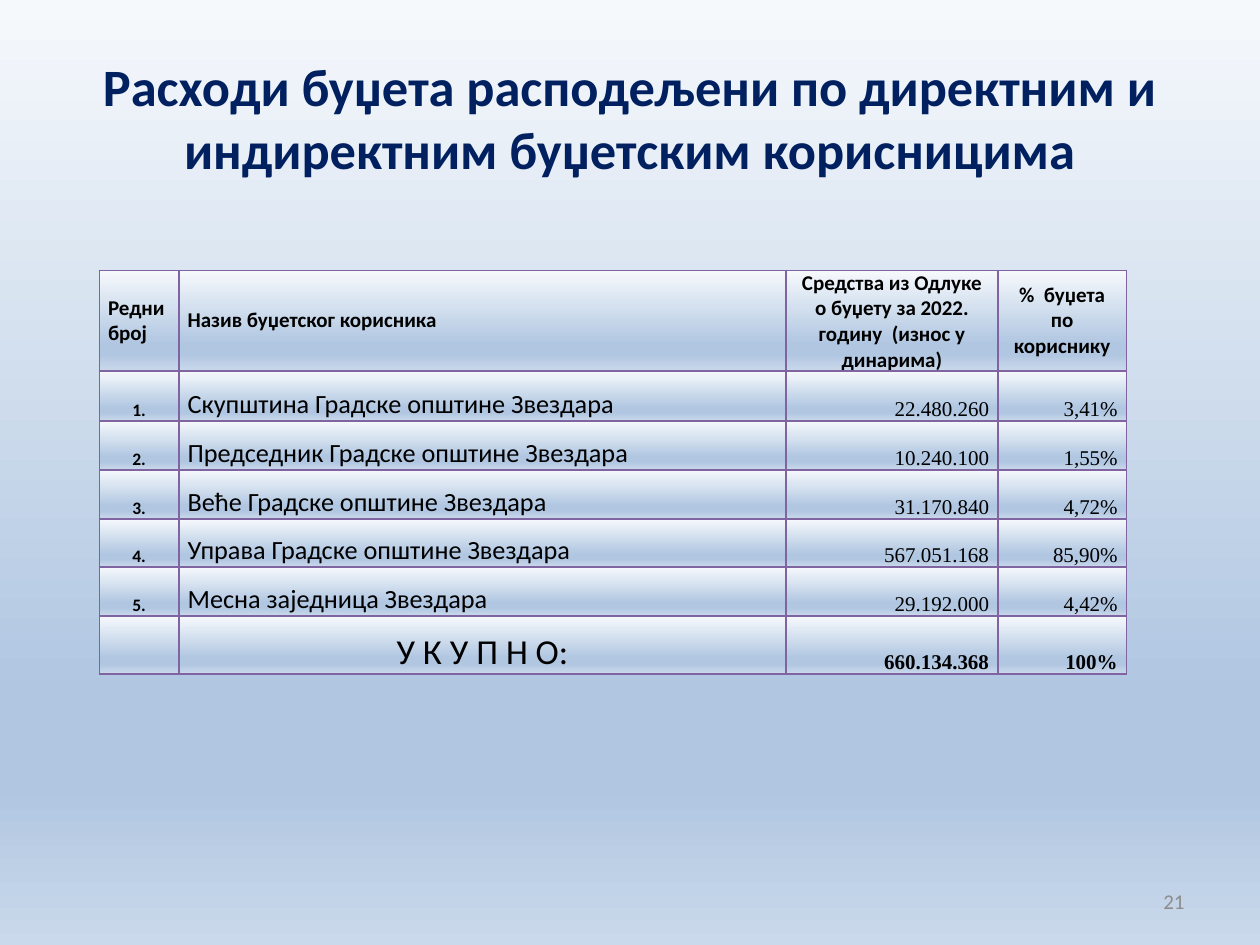
from dataclasses import dataclass

from pptx import Presentation
from pptx.dml.color import RGBColor
from pptx.enum.text import MSO_ANCHOR as Anchor, PP_ALIGN as Align
from pptx.oxml import parse_xml
from pptx.oxml.ns import nsdecls, qn
from pptx.util import Pt


@dataclass(frozen=True)
class Theme:
    navy: str = "002060"
    black: str = "000000"
    grey: str = "8C8C8C"
    border: str = "8064A2"
    gradient: tuple = ((0, "F6F9FC"), (74, "B0C6E1"), (83, "B0C6E1"), (100, "CAD9EB"))
    sans: str = "Calibri"
    serif: str = "Times New Roman"
    title: float = 30
    total: float = 20
    body: float = 15
    small: float = 12
    tiny: float = 10


THEME = Theme()


def style(size, bold=False, color=THEME.black, name=THEME.sans, align=Align.LEFT):
    return {"align": align, "color": color,
            "font": {"size": Pt(size), "bold": bold, "name": name}}


HEADER = style(THEME.small, bold=True)
HEADER_CENTRED = {**HEADER, "align": Align.CENTER}
NUMBER = style(THEME.tiny, bold=True, align=Align.CENTER)
NAME = style(THEME.body)
AMOUNT = style(THEME.small, name=THEME.serif, align=Align.RIGHT)
TOTAL = style(THEME.total, align=Align.CENTER)
TOTAL_AMOUNT = style(THEME.small, bold=True, name=THEME.serif, align=Align.RIGHT)

HEADER_STYLES = (HEADER, HEADER, HEADER_CENTRED, HEADER_CENTRED)
BODY_STYLES = (NUMBER, NAME, AMOUNT, AMOUNT)
TOTAL_STYLES = (NUMBER, TOTAL, TOTAL_AMOUNT, TOTAL_AMOUNT)

COLUMNS = (45.5, 347, 121, 73.5)
HEADINGS = ("Редни\vброј", "Назив буџетског корисника",
            "Средства из Одлуке о буџету за 2022. годину  (износ у динарима)",
            "%  буџета по кориснику")
USERS = (
    ("Скупштина Градске општине Звездара", "22.480.260", "3,41%"),
    ("Председник Градске општине Звездара", "10.240.100", "1,55%"),
    ("Веће Градске општине Звездара", "31.170.840", "4,72%"),
    ("Управа Градске општине Звездара", "567.051.168", "85,90%"),
    ("Месна заједница Звездара", "29.192.000", "4,42%"),
)
TOTALS = ("", "У К У П Н О:", "660.134.368", "100%")
ROW_HEIGHTS = (57, 28.5, 28, 28, 27.5, 28, 33)


def set_all(target, values):
    for key, value in values.items():
        setattr(target, key, value)


class PageBuilder:
    def __init__(self, page, theme):
        self.page = page
        self.theme = theme

    def gradient(self):
        """Return a new top-to-bottom gradient fill element."""
        stops = "".join(
            f'<a:gs pos="{place * 1000}"><a:srgbClr val="{color}"/></a:gs>'
            for place, color in self.theme.gradient)
        return parse_xml(f'<a:gradFill {nsdecls("a")} rotWithShape="1"><a:gsLst>{stops}'
                         '</a:gsLst><a:lin ang="5400000" scaled="0"/></a:gradFill>')

    def background(self):
        self.page.background.fill.solid()
        solid = self.page.element.find(".//" + qn("p:bgPr")).find(qn("a:solidFill"))
        solid.getparent().replace(solid, self.gradient())

    def fill_text(self, frame, text, look):
        para = frame.paragraphs[0]
        para.text = text
        para.alignment = look["align"]
        for font in [para.font] + [span.font for span in para.runs]:
            set_all(font, look["font"])
            font.color.rgb = RGBColor.from_string(look["color"])

    def text(self, place, text, look):
        box = self.page.shapes.add_textbox(*map(Pt, place))
        set_all(box.text_frame, {"word_wrap": True, "vertical_anchor": Anchor.MIDDLE})
        self.fill_text(box.text_frame, text, look)

    def cell(self, cell, text, look, anchor):
        set_all(cell, {"margin_left": Pt(5), "margin_right": Pt(5), "margin_top": 0,
                       "margin_bottom": 0, "vertical_anchor": anchor})
        self.fill_text(cell.text_frame, text, look)
        props = cell._tc.get_or_add_tcPr()
        for side in "LRTB":
            props.append(parse_xml(
                f'<a:ln{side} {nsdecls("a")} w="{Pt(1)}"><a:solidFill>'
                f'<a:srgbClr val="{self.theme.border}"/></a:solidFill></a:ln{side}>'))
        props.append(self.gradient())

    def table(self, left, top, widths, heights, rows):
        """Draw rows given as (texts, styles, anchor)."""
        table = self.page.shapes.add_table(
            len(heights), len(widths), Pt(left), Pt(top),
            Pt(sum(widths)), Pt(sum(heights))).table
        set_all(table, {"first_row": False, "horz_banding": False})
        for column, width in zip(table.columns, widths):
            column.width = Pt(width)
        for row, height, (texts, looks, anchor) in zip(table.rows, heights, rows):
            row.height = Pt(height)
            for cell, text, look in zip(row.cells, texts, looks):
                self.cell(cell, text, look, anchor)


def main():
    deck = Presentation()
    set_all(deck, {"slide_width": Pt(720), "slide_height": Pt(540)})
    builder = PageBuilder(deck.slides.add_slide(deck.slide_layouts[6]), THEME)
    builder.background()
    builder.text((36, 21.6, 648, 90),
                 "Расходи буџета расподељени по директним и индиректним буџетским корисницима",
                 style(THEME.title, bold=True, color=THEME.navy, align=Align.CENTER))
    rows = [(HEADINGS, HEADER_STYLES, Anchor.MIDDLE)]
    rows += [((f"{number}.", *user), BODY_STYLES, Anchor.BOTTOM)
             for number, user in enumerate(USERS, 1)]
    rows.append((TOTALS, TOTAL_STYLES, Anchor.BOTTOM))
    builder.table(56.75, 154.5, COLUMNS, ROW_HEIGHTS, rows)
    builder.text((516, 500.5, 168, 28.75), "21",
                 style(THEME.small, color=THEME.grey, align=Align.RIGHT))
    deck.save("out.pptx")


if __name__ == "__main__":
    main()
